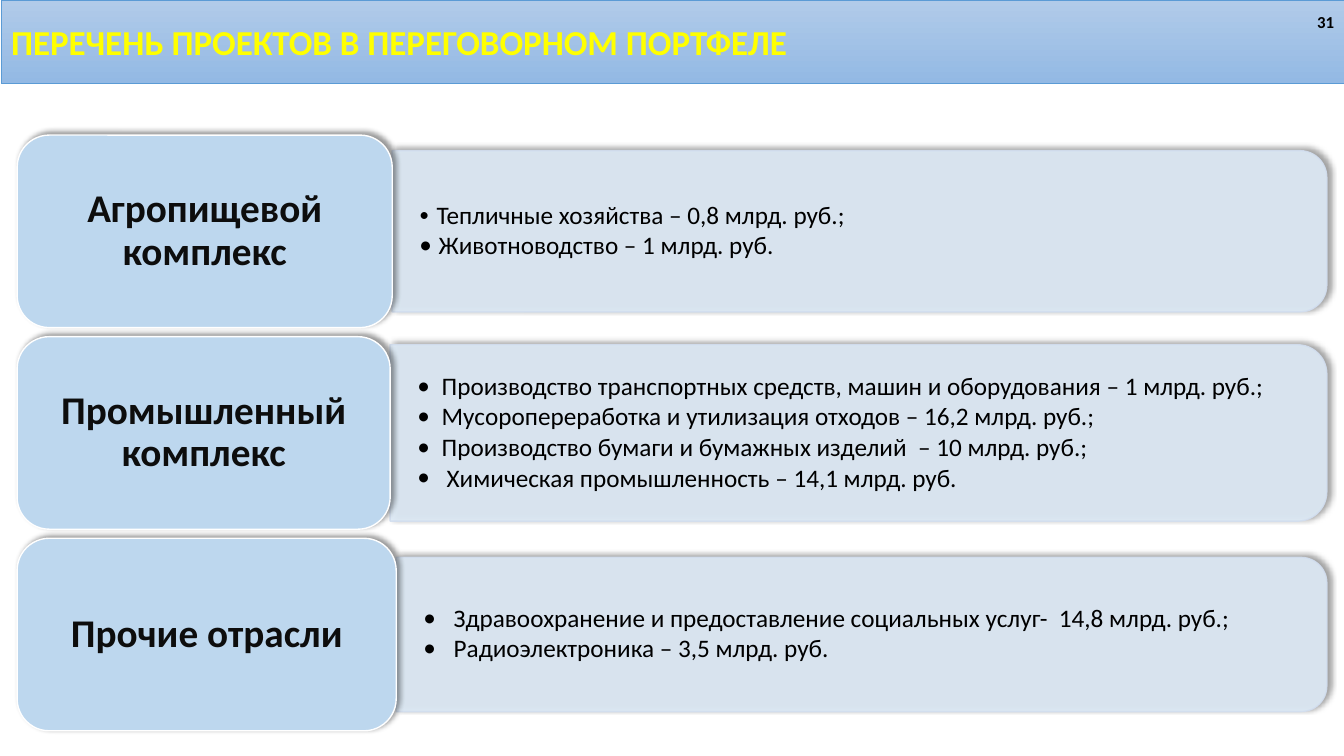
from dataclasses import dataclass

from lxml import etree
from pptx import Presentation
from pptx import util as u
from pptx.dml import color
from pptx.enum import shapes, text
from pptx.oxml import ns


@dataclass(frozen=True)
class Theme:
    font: str = "Calibri"
    band_top: str = "B1CBE9"
    band_bottom: str = "93B9E4"
    band_line: str = "5B9BD5"
    title: str = "FFFF00"
    label: str = "BDD7EE"
    label_line: str = "FFFFFF"
    label_text: str = "0D0D0D"
    panel: str = "DEEBF7"
    panel_line: str = "D2DEEF"
    ink: str = "000000"
    title_size: int = 25
    label_size: int = 28
    item_size: int = 18
    number_size: int = 12


# Sector, label width, panel height, items as (text, indent, bullet size in %)
SECTORS = [
    ("Агропищевой комплекс", 3.72, 1.6, [
        ("Тепличные хозяйства – 0,8 млрд. руб.;", 0.17, 78),
        ("Животноводство – 1 млрд. руб.", 0.19, 100)]),
    ("Промышленный комплекс", 3.7, 1.75, [
        ("Производство транспортных средств, машин и оборудования – 1 млрд. руб.;", 0.24, 100),
        ("Мусоропереработка и утилизация отходов – 16,2 млрд. руб.;", 0.24, 100),
        ("Производство бумаги и бумажных изделий  – 10 млрд. руб.;", 0.24, 100),
        ("Химическая промышленность – 14,1 млрд. руб.", 0.29, 100)]),
    ("Прочие отрасли", 3.76, 1.53, [
        ("Здравоохранение и предоставление социальных услуг-  14,8 млрд. руб.;", 0.3, 100),
        ("Радиоэлектроника – 3,5 млрд. руб.", 0.3, 100)]),
]
LEFT, RIGHT = 0.17, 13.16
LABEL_TOP, LABEL_H, PITCH = 1.34, 1.91, 2.0


def rgb(value):
    return color.RGBColor.from_string(value)


def add_xml(parent, tag, **attrs):
    return etree.SubElement(parent, ns.qn(tag), attrs)


class SlideBuilder:
    def __init__(self, prs, theme):
        self.theme = theme
        self.slide = prs.slides.add_slide(prs.slide_layouts[5])

    def frame(self, sp, side=0.1, edge=0.05):
        tf = sp.text_frame
        settings = {
            "word_wrap": True, "auto_size": text.MSO_AUTO_SIZE.NONE,
            "vertical_anchor": text.MSO_ANCHOR.MIDDLE,
            "margin_left": u.Inches(side), "margin_right": u.Inches(side),
            "margin_top": u.Inches(edge), "margin_bottom": u.Inches(edge),
        }
        for name, value in settings.items():
            setattr(tf, name, value)
        return tf

    def put_text(self, p, words, size, ink, bold=False, **paragraph):
        for name, value in paragraph.items():
            setattr(p, name, value)
        r = p.add_run()
        r.text = words
        for name, value in {"name": self.theme.font, "size": u.Pt(size), "bold": bold}.items():
            setattr(r.font, name, value)
        r.font.color.rgb = rgb(ink)

    def title(self, words):
        t, sp = self.theme, self.slide.shapes.title
        for name, value in {"left": 0.01, "top": 0, "width": 13.32, "height": 0.83}.items():
            setattr(sp, name, u.Inches(value))
        sp.fill.gradient()
        sp.fill.gradient_angle = 270
        stops = zip(sp.fill.gradient_stops, (t.band_top, t.band_bottom))
        for position, (stop, value) in enumerate(stops):
            stop.color.rgb = rgb(value)
            stop.position = position
        sp.line.color.rgb = rgb(t.band_line)
        sp.line.width = u.Pt(0.5)
        self.put_text(self.frame(sp).paragraphs[0], words, t.title_size, t.title, True,
                      alignment=text.PP_ALIGN.LEFT)

    def textbox(self, *box, **margins):
        sp = self.slide.shapes.add_textbox(*map(u.Inches, box))
        return self.frame(sp, **margins)

    def block(self, kind, box, fill, line, opacity=100):
        sp = self.slide.shapes.add_shape(kind, *map(u.Inches, box))
        sp.fill.solid()
        sp.fill.fore_color.rgb = rgb(fill)
        sp.line.color.rgb = rgb(line)
        sp.line.width = u.Pt(1)
        spPr = sp._element.spPr
        if opacity < 100:
            for clr in list(spPr.iter(ns.qn("a:srgbClr"))):
                add_xml(clr, "a:alpha", val=str(opacity * 1000))
        # Soft shadow towards the upper right
        sp.shadow.inherit = False
        shadow = add_xml(spPr.find(ns.qn("a:effectLst")), "a:outerShdw",
                         blurRad=str(u.Pt(4)), dist=str(u.Pt(3)), dir="18900000",
                         algn="bl", rotWithShape="0")
        add_xml(add_xml(shadow, "a:srgbClr", val=self.theme.ink), "a:alpha", val="40000")
        return sp

    def panel(self, left, middle, width, height, items):
        t = self.theme
        # The rounded pair of corners is turned to the right-hand side
        box = (left + (width - height) / 2, middle - width / 2, height, width)
        sp = self.block(shapes.MSO_SHAPE.ROUND_2_SAME_RECTANGLE, box, t.panel, t.panel_line, 90)
        sp.rotation = 90
        tf = self.textbox(left, middle - height / 2, width, height, side=0.27, edge=0.14)
        for i, (words, indent, bullet) in enumerate(items):
            p = tf.add_paragraph() if i else tf.paragraphs[0]
            self.put_text(p, words, t.item_size, t.ink, line_spacing=0.9, space_after=u.Pt(2.4))
            pPr = p._p.get_or_add_pPr()
            pPr.set("marL", str(u.Inches(indent)))
            pPr.set("indent", str(-u.Inches(indent)))
            add_xml(pPr, "a:buSzPct", val=str(bullet * 1000))
            add_xml(pPr, "a:buFont", typeface=t.font)
            add_xml(pPr, "a:buChar", char="•")

    def label(self, box, words):
        t = self.theme
        sp = self.block(shapes.MSO_SHAPE.ROUNDED_RECTANGLE, box, t.label, t.label_line)
        self.put_text(self.frame(sp, 0.12, 0.06).paragraphs[0], words, t.label_size,
                      t.label_text, True, alignment=text.PP_ALIGN.CENTER, line_spacing=0.9)

    def number(self, words):
        tf = self.textbox(10.33, 0.02, 3, 0.4)
        self.put_text(tf.paragraphs[0], words, self.theme.number_size, self.theme.ink, True,
                      alignment=text.PP_ALIGN.RIGHT)


def main():
    prs = Presentation()
    prs.slide_width, prs.slide_height = u.Inches(13.33), u.Inches(7.5)
    page = SlideBuilder(prs, Theme())

    # Header band
    page.title("ПЕРЕЧЕНЬ ПРОЕКТОВ В ПЕРЕГОВОРНОМ ПОРТФЕЛЕ")
    page.number("31")

    # One row per sector, panel centred on its label
    for i, (sector, label_w, panel_h, items) in enumerate(SECTORS):
        top = LABEL_TOP + i * PITCH
        panel_left = LEFT + label_w
        page.panel(panel_left, top + LABEL_H / 2, RIGHT - panel_left, panel_h, items)
        page.label((LEFT, top, label_w, LABEL_H), sector)

    prs.save("out.pptx")


if __name__ == "__main__":
    main()
